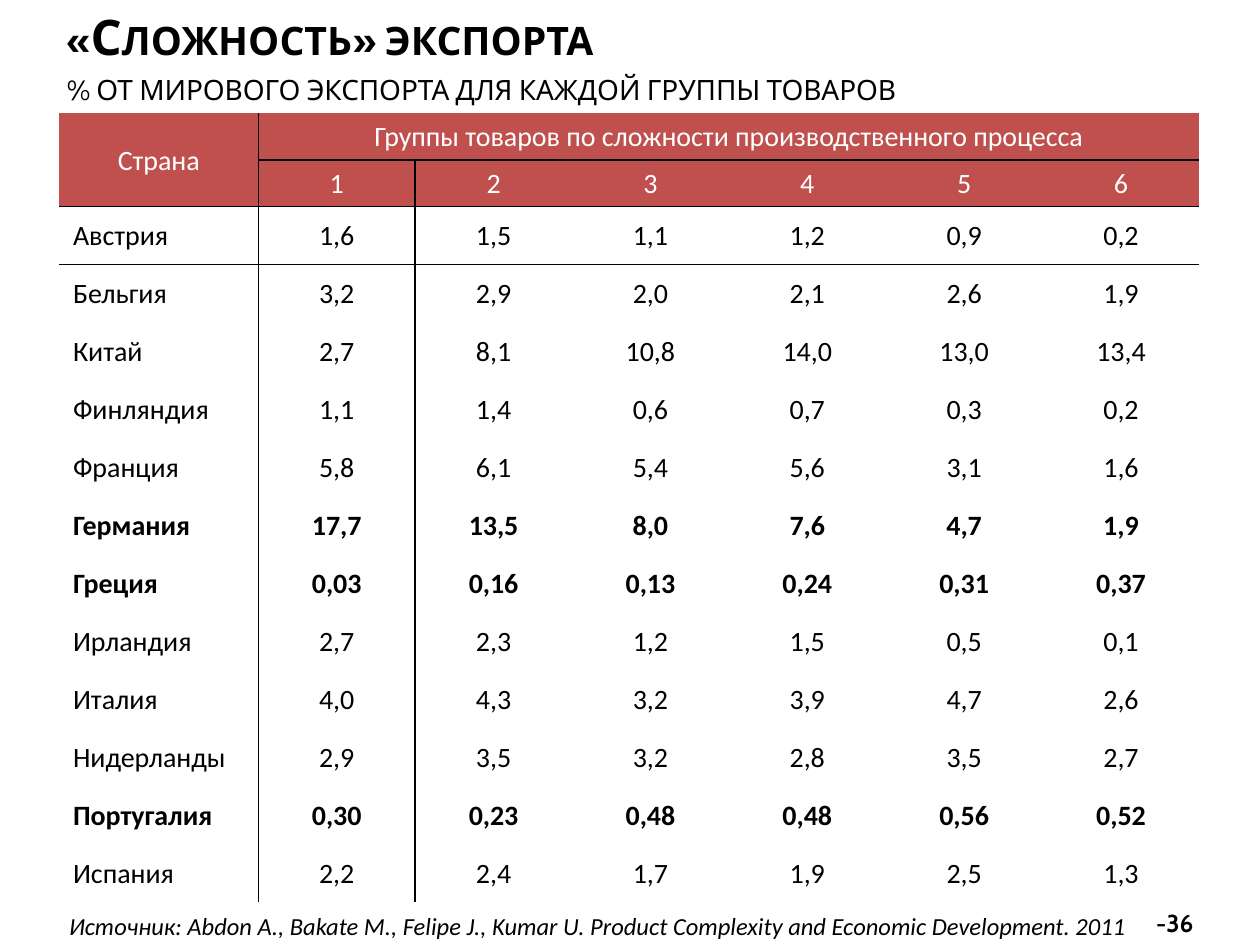
import pptx
import pptx.dml.color
import pptx.enum.text
import pptx.oxml
import pptx.oxml.ns
import pptx.util

Inches, Pt = pptx.util.Inches, pptx.util.Pt
ALIGN, ANCHOR = pptx.enum.text.PP_ALIGN, pptx.enum.text.MSO_ANCHOR
SIZING = pptx.enum.text.MSO_AUTO_SIZE

COLORS = {"text": "000000", "head": "C0504D", "light": "FFFFFF", "line": "000000"}
TITLE = "«Сложность» экспорта"
SUBTITLE = "% от мирового экспорта для каждой группы товаров"
SOURCE = ("Источник: Abdon A., Bakate M., Felipe J., Kumar U. "
          "Product Complexity and Economic Development. 2011")
PAGE = "-36"
CORNER = "Страна"
GROUP = "Группы товаров по сложности производственного процесса"
LEVELS = ["1", "2", "3", "4", "5", "6"]
SHARES = [
    ("Австрия", "1,6", "1,5", "1,1", "1,2", "0,9", "0,2"),
    ("Бельгия", "3,2", "2,9", "2,0", "2,1", "2,6", "1,9"),
    ("Китай", "2,7", "8,1", "10,8", "14,0", "13,0", "13,4"),
    ("Финляндия", "1,1", "1,4", "0,6", "0,7", "0,3", "0,2"),
    ("Франция", "5,8", "6,1", "5,4", "5,6", "3,1", "1,6"),
    ("Германия", "17,7", "13,5", "8,0", "7,6", "4,7", "1,9"),
    ("Греция", "0,03", "0,16", "0,13", "0,24", "0,31", "0,37"),
    ("Ирландия", "2,7", "2,3", "1,2", "1,5", "0,5", "0,1"),
    ("Италия", "4,0", "4,3", "3,2", "3,9", "4,7", "2,6"),
    ("Нидерланды", "2,9", "3,5", "3,2", "2,8", "3,5", "2,7"),
    ("Португалия", "0,30", "0,23", "0,48", "0,48", "0,56", "0,52"),
    ("Испания", "2,2", "2,4", "1,7", "1,9", "2,5", "1,3"),
]
BOLD = {"Германия", "Греция", "Португалия"}
PLAIN_STYLE = "{2D5ABB26-0587-4C30-8999-92F81FD0307C}"  # no style, no grid


def rgb(name):
    return pptx.dml.color.RGBColor.from_string(COLORS[name])


def add_run(para, text, size, font="Calibri", color="text", bold=False, italic=False):
    run = para.add_run()
    run.text = text
    run.font.size, run.font.name = Pt(size), font
    run.font.bold, run.font.italic = bold, italic
    run.font.color.rgb = rgb(color)
    return run


def place(shape, left, top, width, height):
    shape.left, shape.top = Inches(left), Inches(top)
    shape.width, shape.height = Inches(width), Inches(height)


def add_title(slide):
    title = slide.shapes.title
    place(title, 0.43, 0, 9.13, 0.9)
    frame = title.text_frame
    frame.auto_size = SIZING.NONE
    frame.word_wrap = True
    frame.vertical_anchor = ANCHOR.TOP
    para = frame.paragraphs[0]
    para.alignment = ALIGN.LEFT
    head = add_run(para, TITLE, 28, "Cabin", bold=True)
    para.add_line_break()
    sub = add_run(para, SUBTITLE, 20, "Cabin")
    for run in (head, sub):
        run.font._element.set("cap", "small")


def add_note(slide, text, box, wrap=True, anchor=ANCHOR.TOP, align=ALIGN.LEFT, **look):
    frame = slide.shapes.add_textbox(*map(Inches, box)).text_frame
    frame.word_wrap, frame.vertical_anchor = wrap, anchor
    frame.paragraphs[0].alignment = align
    add_run(frame.paragraphs[0], text, 14, **look)


def set_edges(cell, sides):
    """Draw a thin line on the sides named by L, R, T, B, in that order."""
    props = cell._tc.get_or_add_tcPr()
    for spot, side in enumerate(sides):
        props.insert(spot, pptx.oxml.parse_xml(
            f'<a:ln{side} {pptx.oxml.ns.nsdecls("a")} w="{Pt(1)}"><a:solidFill>'
            f'<a:srgbClr val="{COLORS["line"]}"/></a:solidFill></a:ln{side}>'))


def edges(row, col):
    sides = "R" if col == 0 else "L" if col == 1 else ""
    if row == 2 or (row == 1 and col > 0):
        sides += "T"
    if row == 1 or (row == 0 and col > 0):
        sides += "B"
    return sides


def fill_cell(cell, text, row, col, bold):
    cell.margin_left = cell.margin_right = cell.margin_top = Inches(0.01)
    cell.margin_bottom = 0
    cell.vertical_anchor = ANCHOR.MIDDLE
    head = row < 2
    if head:
        cell.fill.solid()
        cell.fill.fore_color.rgb = rgb("head")
    else:
        cell.fill.background()
    set_edges(cell, edges(row, col))
    para = cell.text_frame.paragraphs[0]
    if head or col:
        para.alignment = ALIGN.CENTER
    else:
        para._p.get_or_add_pPr().set("marL", str(Inches(0.1)))
    if text:
        add_run(para, text, 16, color="light" if head else "text", bold=bold)


def add_shares(slide):
    blank = [""] * (len(LEVELS) - 1)
    rows = [(CORNER, GROUP, *blank), ("", *LEVELS), *SHARES]
    heights = [0.37] * 2 + [0.46] * len(SHARES)
    widths = [1.58] + [1.245] * len(LEVELS)
    frame = slide.shapes.add_table(
        len(rows), len(widths), Inches(0.47), Inches(0.9),
        Inches(sum(widths)), Inches(sum(heights)))
    table = frame.table
    table.first_row = table.horz_banding = False
    table._tbl.tblPr.find(pptx.oxml.ns.qn("a:tableStyleId")).text = PLAIN_STYLE
    for col, width in zip(table.columns, widths):
        col.width = Inches(width)
    for line, height in zip(table.rows, heights):
        line.height = Inches(height)
    table.cell(0, 0).merge(table.cell(1, 0))
    table.cell(0, 1).merge(table.cell(0, len(LEVELS)))
    for row, texts in enumerate(rows):
        for col, text in enumerate(texts):
            fill_cell(table.cell(row, col), text, row, col, texts[0] in BOLD)


def main():
    deck = pptx.Presentation()
    deck.slide_width, deck.slide_height = Inches(10), Inches(7.5)
    slide = deck.slides.add_slide(deck.slide_layouts[5])
    add_note(slide, SOURCE, (0.45, 7.18, 9.06, 0.34), italic=True)
    add_note(slide, PAGE, (9.02, 7.14, 0.55, 0.37), wrap=False, anchor=ANCHOR.MIDDLE,
             align=ALIGN.RIGHT, font="Cabin", bold=True)
    add_title(slide)
    add_shares(slide)
    deck.save("out.pptx")


if __name__ == "__main__":
    main()
